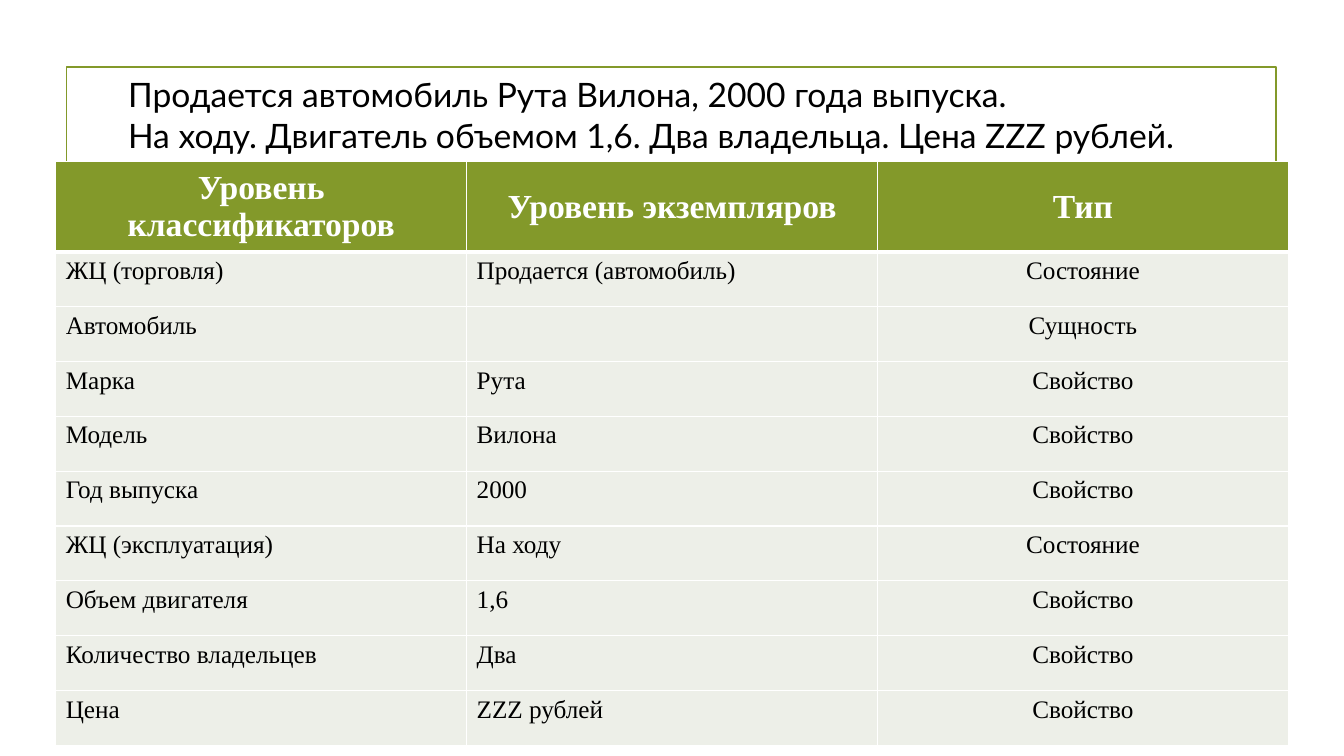
from lxml import etree
from pptx import Presentation
from pptx.dml.color import RGBColor
from pptx.enum.shapes import MSO_SHAPE as Preset
from pptx.enum.text import MSO_ANCHOR as Anchor, PP_ALIGN as Align
from pptx.oxml.ns import qn
from pptx.util import Pt

GREEN, PALE, WHITE, BLACK = "83992A", "EDEFE8", "FFFFFF", "000000"
HEADER_HEIGHT, ROW_HEIGHT = 63.6, 39.15

AD_LINES = [
    "Продается автомобиль Рута Вилона, 2000 года выпуска.",
    "На ходу. Двигатель объемом 1,6. Два владельца. Цена ZZZ рублей.",
]
HEADINGS = ("Уровень классификаторов", "Уровень экземпляров", "Тип")
ROWS = [
    ("ЖЦ (торговля)", "Продается (автомобиль)", "Состояние"),
    ("Автомобиль", "", "Сущность"),
    ("Марка", "Рута", "Свойство"),
    ("Модель", "Вилона", "Свойство"),
    ("Год выпуска", "2000", "Свойство"),
    ("ЖЦ (эксплуатация)", "На ходу", "Состояние"),
    ("Объем двигателя", "1,6", "Свойство"),
    ("Количество владельцев", "Два", "Свойство"),
    ("Цена", "ZZZ рублей", "Свойство"),
]


def paint(fill, color):
    fill.solid()
    fill.fore_color.rgb = RGBColor.from_string(color)


def write(para, text, font="Times New Roman", size=18, color=BLACK,
          bold=False, align=Align.LEFT):
    para.alignment = align
    para.font.size = Pt(size)
    if text:
        span = para.add_run()
        span.text = text
        span.font.name = font
        span.font.size = Pt(size)
        span.font.bold = bold
        paint(span.font.fill, color)


def add_borders(cell, top=1, bottom=1):
    """Give the cell white borders; call before filling the cell."""
    properties = cell._tc.get_or_add_tcPr()
    for side, width in (("L", 1), ("R", 1), ("T", top), ("B", bottom)):
        line = etree.SubElement(properties, qn("a:ln" + side), w=str(Pt(width)))
        fill = etree.SubElement(line, qn("a:solidFill"))
        etree.SubElement(fill, qn("a:srgbClr"), val=WHITE)


def add_frame(page, left, top, width, height):
    frame = page.shapes.add_shape(
        Preset.RECTANGLE, Pt(left), Pt(top), Pt(width), Pt(height))
    frame.shadow.inherit = False
    frame.fill.background()
    paint(frame.line.fill, GREEN)
    frame.line.width = Pt(1.25)


def add_ad(page, left, top, width, height):
    box = page.shapes.add_textbox(Pt(left), Pt(top), Pt(width), Pt(height))
    text_frame = box.text_frame
    text_frame.word_wrap = True
    text_frame.vertical_anchor = Anchor.MIDDLE
    for index, text in enumerate(AD_LINES):
        para = text_frame.add_paragraph() if index else text_frame.paragraphs[0]
        write(para, text, font="Lato", size=24)


def add_levels_table(page, left, top, width):
    height = HEADER_HEIGHT + ROW_HEIGHT * len(ROWS)
    table = page.shapes.add_table(
        len(ROWS) + 1, len(HEADINGS), Pt(left), Pt(top), Pt(width), Pt(height)).table
    for column in table.columns:
        column.width = Pt(width / len(HEADINGS))
    for row_index, texts in enumerate([HEADINGS, *ROWS]):
        header = row_index == 0
        table.rows[row_index].height = Pt(HEADER_HEIGHT if header else ROW_HEIGHT)
        for column_index, text in enumerate(texts):
            cell = table.cell(row_index, column_index)
            add_borders(cell, top=3 if row_index == 1 else 1, bottom=3 if header else 1)
            paint(cell.fill, GREEN if header else PALE)
            cell.vertical_anchor = Anchor.MIDDLE if header else Anchor.TOP
            centred = header or column_index == len(HEADINGS) - 1
            write(cell.text_frame.paragraphs[0], text,
                  size=24 if header else 18,
                  color=WHITE if header else BLACK,
                  bold=header,
                  align=Align.CENTER if centred else Align.LEFT)


def main():
    deck = Presentation()
    deck.slide_width, deck.slide_height = Pt(960), Pt(540)
    page = deck.slides.add_slide(deck.slide_layouts[6])
    paint(page.background.fill, WHITE)
    add_frame(page, 47.5, 48, 864, 444)
    add_ad(page, 84.4, 49, 804, 65.5)
    add_levels_table(page, 39.8, 115.2, 880.5)
    deck.save("out.pptx")


if __name__ == "__main__":
    main()
